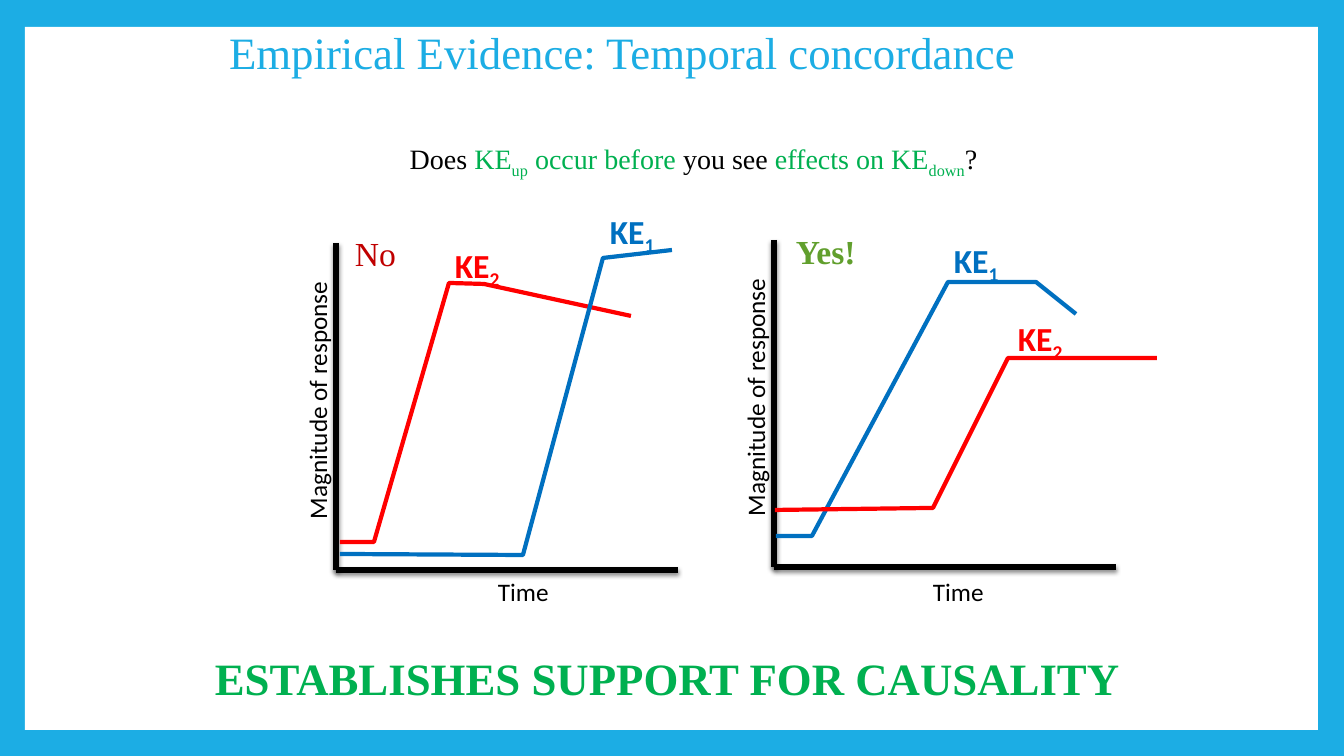
from pptx import Presentation
from pptx.dml.color import RGBColor
from pptx.enum.shapes import MSO_CONNECTOR, MSO_SHAPE
from pptx.enum.text import MSO_ANCHOR, MSO_AUTO_SIZE, PP_ALIGN
from pptx.oxml import parse_xml
from pptx.oxml.ns import nsdecls
from pptx.util import Pt

STRAIGHT = MSO_CONNECTOR.STRAIGHT
RECTANGLE = MSO_SHAPE.RECTANGLE
MIDDLE = MSO_ANCHOR.MIDDLE
GROW = MSO_AUTO_SIZE.SHAPE_TO_FIT_TEXT
NO_AUTO_SIZE = MSO_AUTO_SIZE.NONE
LEFT, CENTER = PP_ALIGN.LEFT, PP_ALIGN.CENTER

WIDTH, HEIGHT = 1344, 756
EMU_PER_PX = 12192000 / WIDTH

BLACK = RGBColor(0x00, 0x00, 0x00)
WHITE = RGBColor(0xFF, 0xFF, 0xFF)
SKY = RGBColor(0x1C, 0xAD, 0xE4)
GREEN = RGBColor(0x00, 0xB0, 0x50)
LEAF = RGBColor(0x61, 0x9F, 0x2D)
BLUE = RGBColor(0x00, 0x70, 0xC0)
RED = RGBColor(0xFF, 0x00, 0x00)
DARK_RED = RGBColor(0xC0, 0x00, 0x00)

SERIF = "Times New Roman"
SANS = "Calibri"
AXIS_SHADOW = (
    f'<a:effectLst {nsdecls("a")}>'
    '<a:outerShdw blurRad="38100" dist="25400" dir="5400000" rotWithShape="0">'
    '<a:srgbClr val="000000"><a:alpha val="45000"/></a:srgbClr>'
    '</a:outerShdw></a:effectLst>'
)


def px(length):
    return round(length * EMU_PER_PX)


class SlideBuilder:
    def __init__(self, presentation):
        self.slide = presentation.slides.add_slide(presentation.slide_layouts[5])

    def background(self, color):
        fill = self.slide.background.fill
        fill.solid()
        fill.fore_color.rgb = color

    def panel(self, box, color):
        shape = self.slide.shapes.add_shape(RECTANGLE, *map(px, box))
        shape.shadow.inherit = False
        shape.fill.solid()
        shape.fill.fore_color.rgb = color
        shape.line.fill.background()
        self.slide.shapes.title._element.addprevious(shape._element)

    def style(self, font, size, color, name, bold=False):
        font.size = Pt(size)
        font.color.rgb = color
        font.name = name
        font.bold = bold

    def title(self, text, box):
        title = self.slide.shapes.title
        title.left, title.top, title.width, title.height = map(px, box)
        frame = title.text_frame
        frame.text = text
        frame.vertical_anchor = MIDDLE
        frame.auto_size = NO_AUTO_SIZE
        paragraph = frame.paragraphs[0]
        paragraph.alignment = LEFT
        paragraph.line_spacing = 0.9
        self.style(paragraph.runs[0].font, 32, SKY, SERIF)

    def text(self, runs, box, size, name=SERIF, bold=False, align=LEFT,
             rotation=0, wrap=True):
        shape = self.slide.shapes.add_textbox(*map(px, box))
        shape.rotation = rotation
        frame = shape.text_frame
        frame.word_wrap = wrap
        frame.auto_size = GROW
        paragraph = frame.paragraphs[0]
        paragraph.alignment = align
        for text, color, subscript in runs:
            run = paragraph.add_run()
            run.text = text
            self.style(run.font, size, color, name, bold)
            if subscript:
                run._r.get_or_add_rPr().set("baseline", "-25000")

    def axis_line(self, start, end):
        line = self.slide.shapes.add_connector(
            STRAIGHT, *map(px, (*start, *end)))
        line.line.color.rgb = BLACK
        line.line.width = Pt(4.25)
        line._element.spPr.append(parse_xml(AXIS_SHADOW))

    def axes(self, left, top, time_box):
        bottom = top + 327
        self.axis_line((left, top), (left, bottom))
        self.axis_line((left + 342, bottom), (left, bottom))
        self.text([("Magnitude of response", BLACK, False)],
                  (left - 167, top + 118, 296, 40), 18, SANS, rotation=270)
        self.text([("Time", BLACK, False)], time_box, 18, SANS)

    def curve(self, points, color):
        start, *rest = [(px(x), px(y)) for x, y in points]
        builder = self.slide.shapes.build_freeform(*start)
        builder.add_line_segments(rest, close=False)
        shape = builder.convert_to_shape()
        shape.shadow.inherit = False
        shape.fill.background()
        shape.line.color.rgb = color
        shape.line.width = Pt(3)

    def key_event(self, number, color, box):
        self.text([("KE", color, False), (number, color, True)],
                  box, 24, SANS, bold=True)


def main():
    presentation = Presentation()
    presentation.slide_width, presentation.slide_height = px(WIDTH), px(HEIGHT)
    builder = SlideBuilder(presentation)
    builder.background(SKY)
    builder.panel((25, 27, 1293, 703), WHITE)
    builder.title("Empirical Evidence: Temporal concordance", (219, 17, 958, 76))
    builder.text([
        ("Does ", BLACK, False),
        ("KE", GREEN, False),
        ("up", GREEN, True),
        (" occur before", GREEN, False),
        (" you see ", BLACK, False),
        ("effects on KE", GREEN, False),
        ("down", GREEN, True),
        ("?", BLACK, False),
    ], (230, 137, 927, 44), 20, align=CENTER)

    builder.axes(336, 243, (488, 571, 91, 40))
    builder.key_event("1", BLUE, (600, 206, 75, 50))
    builder.key_event("2", RED, (445, 240, 77, 50))
    builder.curve([(340, 542), (374, 542), (449, 283), (484, 284), (631, 316)], RED)
    builder.curve([(340, 554), (523, 555), (603, 258), (672, 250)], BLUE)
    builder.text([("No", DARK_RED, False)], (345, 228, 67, 50), 24)

    builder.axes(774, 240, (923, 571, 74, 40))
    builder.key_event("1", BLUE, (944, 235, 102, 50))
    builder.key_event("2", RED, (1008, 313, 77, 50))
    builder.curve([(776, 536), (812, 536), (948, 282), (1036, 282), (1076, 314)], BLUE)
    builder.curve([(775, 510), (933, 508), (1008, 358), (1157, 358)], RED)
    builder.text([("Yes!", LEAF, False)], (786, 226, 92, 50), 24, bold=True)

    builder.text([("ESTABLISHES SUPPORT FOR CAUSALITY", GREEN, False)],
                 (205, 646, 933, 64), 32, bold=True, wrap=False)
    presentation.save("out.pptx")


if __name__ == "__main__":
    main()
